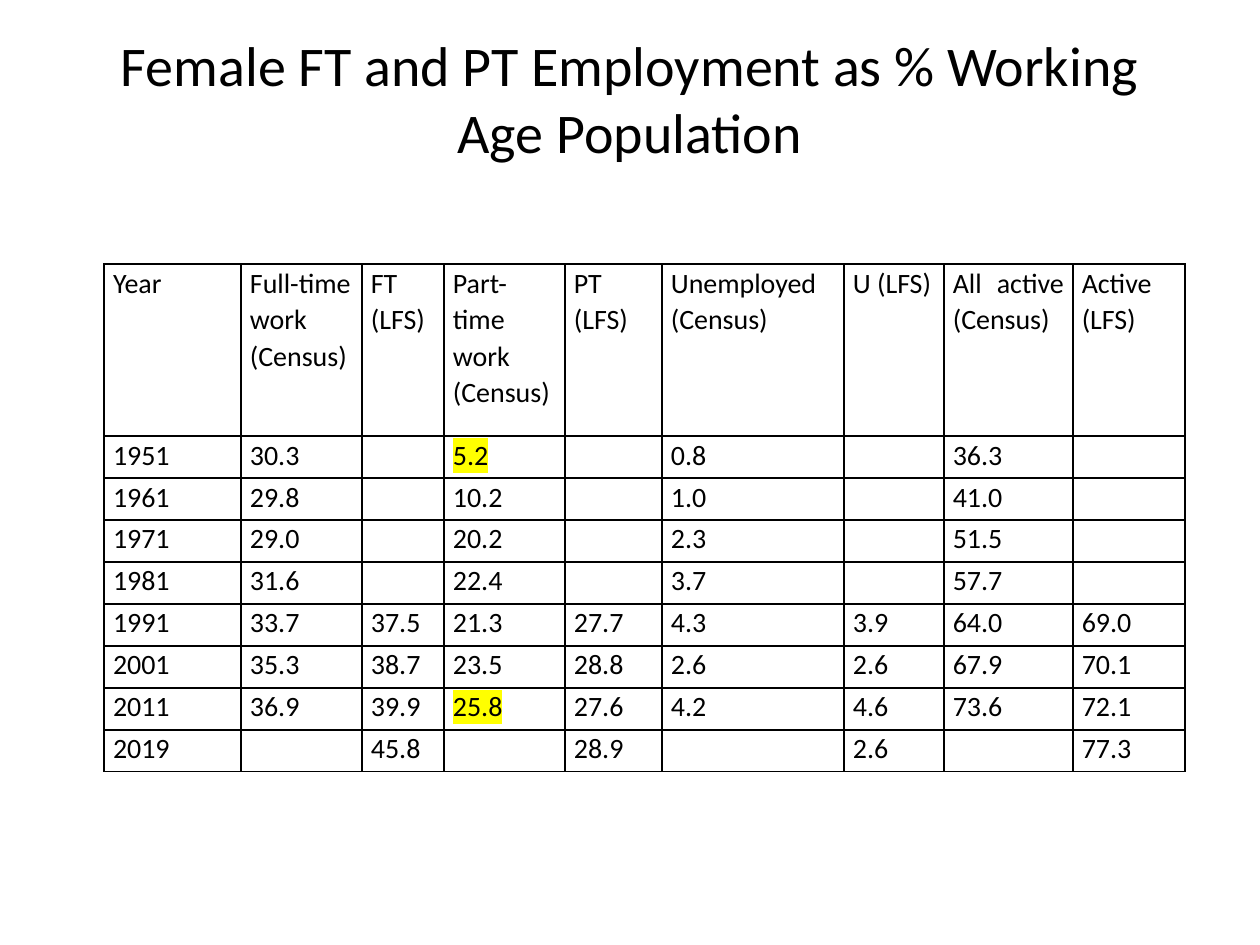
from lxml import etree
from pptx import Presentation
from pptx.dml.color import RGBColor
from pptx.enum.text import MSO_ANCHOR, PP_ALIGN
from pptx.oxml.ns import qn
from pptx.util import Emu, Pt

TOP = MSO_ANCHOR.TOP
CENTER, JUSTIFY, LEFT = PP_ALIGN.CENTER, PP_ALIGN.JUSTIFY, PP_ALIGN.LEFT
PX = 914400 / 126
BLACK, YELLOW = "000000", "FFFF00"


def px(length):
    return Emu(round(length * PX))


def style_font(font, size, color):
    font.size = Pt(size)
    font.name = "Calibri"
    font.bold = False
    font.color.rgb = RGBColor.from_string(color)


prs = Presentation()
prs.slide_width, prs.slide_height = px(1260), px(945)
slide = prs.slides.add_slide(prs.slide_layouts[6])

title = slide.shapes.add_textbox(px(63), px(26), px(1134), px(68)).text_frame
title.word_wrap = True
title.vertical_anchor = TOP
title.margin_top = px(4)
title.margin_bottom = 0
title.text = "Female FT and PT Employment as % Working Age Population"
title.paragraphs[0].alignment = CENTER
style_font(title.paragraphs[0].runs[0].font, 32, BLACK)

rates = [
    ["Year", "Full-time work (Census)", "FT (LFS)", "Part-time work (Census)", "PT (LFS)",
     "Unemployed (Census)", "U (LFS)", "All active (Census)", "Active (LFS)"],
    ["1951", "30.3", "", "5.2", "", "0.8", "", "36.3", ""],
    ["1961", "29.8", "", "10.2", "", "1.0", "", "41.0", ""],
    ["1971", "29.0", "", "20.2", "", "2.3", "", "51.5", ""],
    ["1981", "31.6", "", "22.4", "", "3.7", "", "57.7", ""],
    ["1991", "33.7", "37.5", "21.3", "27.7", "4.3", "3.9", "64.0", "69.0"],
    ["2001", "35.3", "38.7", "23.5", "28.8", "2.6", "2.6", "67.9", "70.1"],
    ["2011", "36.9", "39.9", "25.8", "27.6", "4.2", "4.6", "73.6", "72.1"],
    ["2019", "", "45.8", "", "28.9", "", "2.6", "", "77.3"],
]
column_widths = [137, 121, 82, 121, 97, 182, 100, 129, 112]
row_heights = [172] + [42] * 8
highlighted = {"5.2", "25.8"}

table = slide.shapes.add_table(
    len(rates), len(column_widths), px(104), px(264),
    px(sum(column_widths)), px(sum(row_heights))).table
table.first_row = False
table.horz_banding = False
for column, width in zip(table.columns, column_widths):
    column.width = px(width)
for row, height in zip(table.rows, row_heights):
    row.height = px(height)

for row_index, row_values in enumerate(rates):
    for column_index, value in enumerate(row_values):
        cell = table.cell(row_index, column_index)
        cell.margin_left = cell.margin_right = px(9)
        cell.margin_top = cell.margin_bottom = 0
        cell.vertical_anchor = TOP
        cell_properties = cell._tc.get_or_add_tcPr()
        for side in ("a:lnL", "a:lnR", "a:lnT", "a:lnB"):
            border = etree.SubElement(cell_properties, qn(side), w=str(Pt(1)))
            border_fill = etree.SubElement(border, qn("a:solidFill"))
            etree.SubElement(border_fill, qn("a:srgbClr"), val=BLACK)
        cell.fill.background()
        if not value:
            continue
        cell.text_frame.text = value
        paragraph = cell.text_frame.paragraphs[0]
        paragraph.alignment = LEFT if row_index >= 5 and column_index >= 6 else JUSTIFY
        paragraph.line_spacing = 1.07
        run = paragraph.runs[0]
        style_font(run.font, 16, BLACK)
        if value in highlighted:
            highlight = etree.Element(qn("a:highlight"))
            etree.SubElement(highlight, qn("a:srgbClr"), val=YELLOW)
            run._r.rPr.find(qn("a:latin")).addprevious(highlight)

prs.save("out.pptx")
